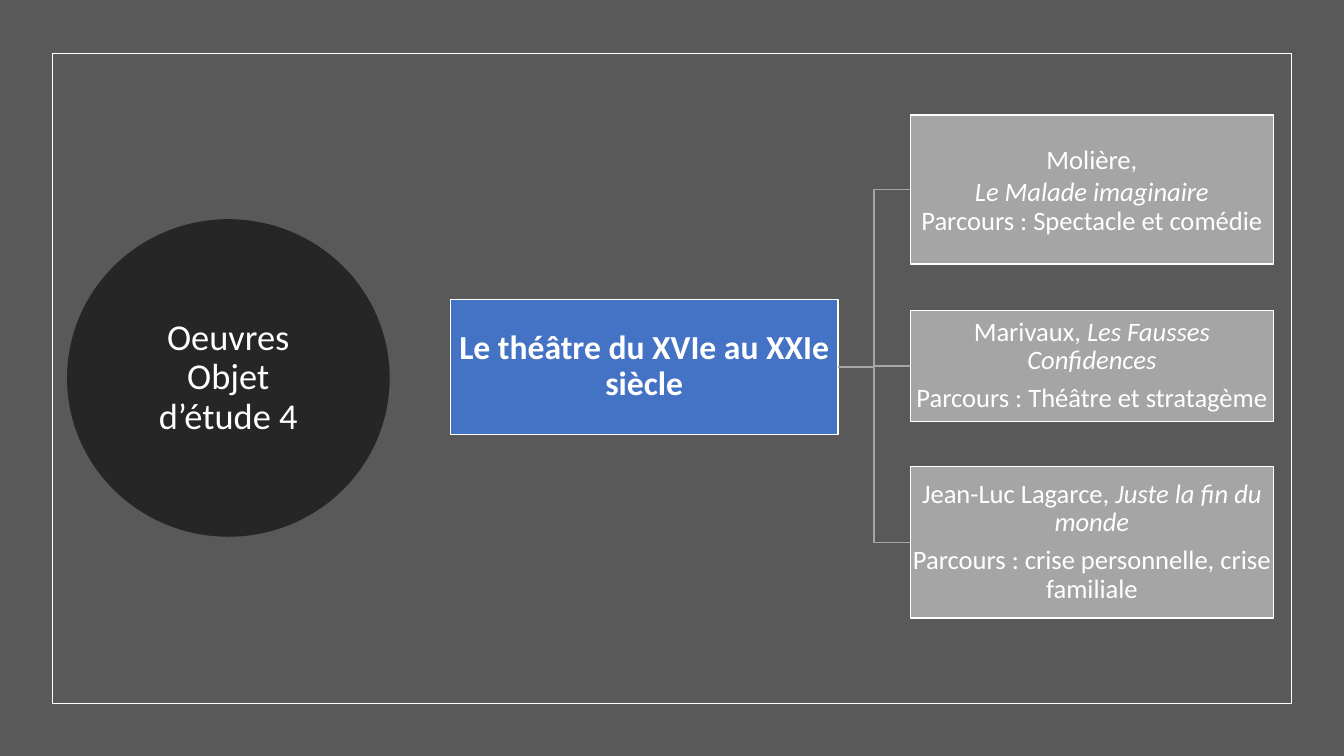
from dataclasses import dataclass

import pptx
import pptx.dml.color
import pptx.enum.shapes
import pptx.enum.text
import pptx.oxml
import pptx.shapes.autoshape
import pptx.slide
import pptx.util

Inches = pptx.util.Inches
Pt = pptx.util.Pt
RGBColor = pptx.dml.color.RGBColor
Shape = pptx.enum.shapes.MSO_SHAPE

WHITE = RGBColor(0xFF, 0xFF, 0xFF)
BACKDROP_GREY = RGBColor(0x59, 0x59, 0x59)
DISC_BLACK = RGBColor(0x26, 0x26, 0x26)
TOPIC_BLUE = RGBColor(0x44, 0x72, 0xC4)
WORK_GREY = RGBColor(0xA5, 0xA5, 0xA5)

FONT = "Calibri"
RIGHT_SIDE, LEFT_SIDE = 3, 1
WORK_LEFT, WORK_WIDTH = 9.03, 3.6


@dataclass(frozen=True)
class Line:
    """One paragraph: upright words followed by an italic title."""
    text: str
    title: str = ""
    spacing: float = 0.9
    after: float = 6.65


@dataclass(frozen=True)
class Work:
    top: float
    height: float
    lines: tuple[Line, ...]


WORKS = (
    Work(1.14, 1.48, (
        Line("Molière,", spacing=1, after=0),
        Line("", "Le Malade imaginaire", spacing=1, after=0),
        Line("Parcours : Spectacle et comédie"),
    )),
    Work(3.08, 1.1, (
        Line("Marivaux, ", "Les Fausses Confidences"),
        Line("Parcours : Théâtre et stratagème"),
    )),
    Work(4.63, 1.5, (
        Line("Jean-Luc Lagarce, ", "Juste la fin du monde"),
        Line("Parcours : crise personnelle, crise familiale"),
    )),
)


def add_panel(slide: pptx.slide.Slide, kind: Shape, left: float, top: float,
              width: float, height: float, fill: RGBColor | None = None,
              outline: RGBColor | None = None,
              weight: float = 1) -> pptx.shapes.autoshape.Shape:
    panel = slide.shapes.add_shape(
        kind, Inches(left), Inches(top), Inches(width), Inches(height))
    panel.shadow.inherit = False
    if fill is None:
        panel.fill.background()
    else:
        panel.fill.solid()
        panel.fill.fore_color.rgb = fill
    if outline is None:
        panel.line.fill.background()
    else:
        panel.line.color.rgb = outline
        panel.line.width = Pt(weight)
    return panel


def write(panel: pptx.shapes.autoshape.Shape, lines: tuple[Line, ...], size: float,
          bold: bool = False, inset: float | None = None) -> None:
    frame = panel.text_frame
    frame.word_wrap = True
    frame.vertical_anchor = pptx.enum.text.MSO_ANCHOR.MIDDLE
    if inset is not None:
        frame.margin_left = frame.margin_right = Inches(inset)
        frame.margin_top = frame.margin_bottom = Inches(inset)
    for index, line in enumerate(lines):
        paragraph = frame.add_paragraph() if index else frame.paragraphs[0]
        paragraph.alignment = pptx.enum.text.PP_ALIGN.CENTER
        paragraph.line_spacing = line.spacing
        paragraph.space_after = Pt(line.after)
        paragraph.font.name = FONT
        paragraph.font.size = Pt(size)
        paragraph.font.bold = bold
        paragraph.font.color.rgb = WHITE
        if line.text:
            paragraph.add_run().text = line.text
        if line.title:
            title = paragraph.add_run()
            title.text = line.title
            title.font.italic = True


def add_branch(slide: pptx.slide.Slide, topic: pptx.shapes.autoshape.Shape,
               work: pptx.shapes.autoshape.Shape) -> None:
    branch = slide.shapes.add_connector(
        pptx.enum.shapes.MSO_CONNECTOR.ELBOW,
        topic.left + topic.width, topic.top + topic.height // 2,
        work.left, work.top + work.height // 2)
    branch.begin_connect(topic, RIGHT_SIDE)
    branch.end_connect(work, LEFT_SIDE)
    branch.line.color.rgb = WORK_GREY
    branch.line.width = Pt(1)
    properties = branch.element.spPr
    properties.append(properties.makeelement(pptx.oxml.ns.qn("a:effectLst"), {}))


def main() -> None:
    deck = pptx.Presentation()
    deck.slide_width, deck.slide_height = Inches(13.33), Inches(7.5)
    slide = deck.slides.add_slide(deck.slide_layouts[6])

    add_panel(slide, Shape.RECTANGLE, 0, 0, 13.33, 7.5, BACKDROP_GREY)
    add_panel(slide, Shape.RECTANGLE, 0.52, 0.53, 12.29, 6.45, outline=WHITE)

    heading = add_panel(slide, Shape.OVAL, 0.76, 2.27, 3.01, 2.96,
                        DISC_BLACK, DISC_BLACK, 13.75)
    write(heading, (Line("Oeuvres Objet d’étude 4", after=6),), 26)

    topic = add_panel(slide, Shape.RECTANGLE, 4.47, 2.97, 3.84, 1.34, TOPIC_BLUE, WHITE)
    write(topic, (Line("Le théâtre du XVIe au XXIe siècle"),), 24, bold=True, inset=0.02)

    for work in WORKS:
        card = add_panel(slide, Shape.RECTANGLE, WORK_LEFT, work.top,
                         WORK_WIDTH, work.height, WORK_GREY, WHITE)
        write(card, work.lines, 19, inset=0.01)
        add_branch(slide, topic, card)

    deck.save("out.pptx")


if __name__ == "__main__":
    main()
